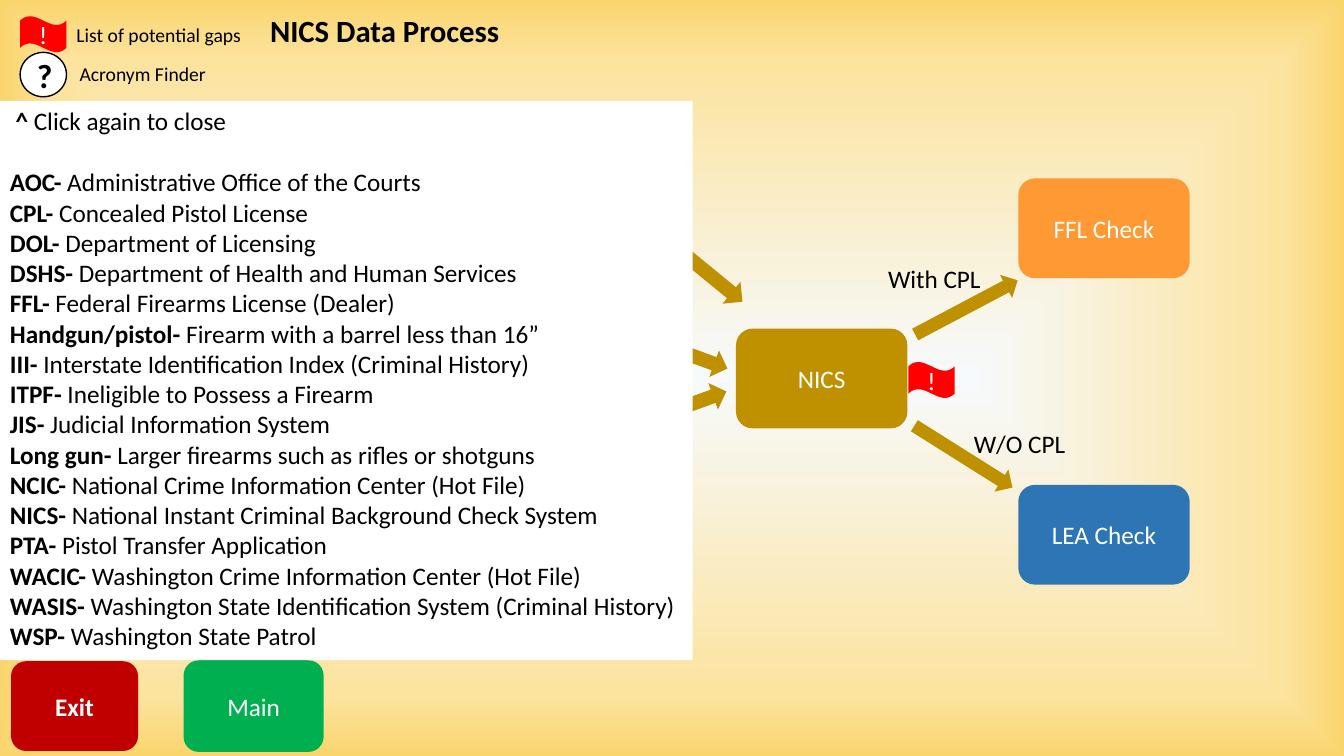
from dataclasses import dataclass

from pptx import Presentation, util as u
from pptx.dml.color import RGBColor
from pptx.enum import shapes, text
from pptx.oxml import parse_xml

SCALE = 9144  # EMU per px, 100 px to the inch
KIND = shapes.MSO_SHAPE


@dataclass(frozen=True)
class Theme:
    font: str = "Calibri"
    gold: str = "BF9000"
    red: str = "FF0000"
    dark_red: str = "C00000"
    green: str = "00B050"
    orange: str = "FF9933"
    blue: str = "2E75B6"
    white: str = "FFFFFF"
    black: str = "000000"
    background: tuple = ((0, "F7FAFD"), (84, "FCE39E"), (100, "FAD56E"))
    small: int = 14
    body: int = 18
    title: int = 22
    symbol: int = 24


THEME = Theme()


@dataclass(frozen=True)
class Box:
    left: int
    top: int
    width: int
    height: int

    def emu(self) -> list:
        return [u.Emu(px * SCALE) for px in (self.left, self.top, self.width, self.height)]


@dataclass(frozen=True)
class Node:
    box: Box
    label: str
    fill: str
    kind: int = KIND.ROUNDED_RECTANGLE
    color: str = THEME.white
    size: int = THEME.body
    bold: bool = False
    outline: str = ""


@dataclass(frozen=True)
class Arrow:
    box: Box
    rotation: float


@dataclass(frozen=True)
class Label:
    box: Box
    label: str
    size: int = THEME.body
    bold: bool = False
    wrap: bool = True


NODES = [
    Node(Box(730, 326, 170, 99), "NICS", THEME.gold),
    Node(Box(11, 656, 126, 89), "Exit", THEME.dark_red, bold=True),
    Node(Box(182, 655, 139, 91), "Main", THEME.green),
    Node(Box(1010, 177, 170, 99), "FFL Check", THEME.orange),
    Node(Box(1010, 481, 170, 99), "LEA Check", THEME.blue),
    Node(Box(20, 16, 46, 36), "!", THEME.red, KIND.WAVE),
    Node(Box(901, 359, 46, 36), "!", THEME.red, KIND.WAVE),
]
ACRONYM_BUTTON = Node(Box(20, 52, 46, 44), "?", THEME.white, KIND.OVAL, THEME.black,
                      THEME.symbol, True, THEME.black)
ARROWS = [
    Arrow(Box(559, 222, 200, 28), 39.3),
    Arrow(Box(576, 326, 150, 28), 20),
    Arrow(Box(575, 400, 150, 28), 340),
    Arrow(Box(901, 292, 115, 26), 332.1),
    Arrow(Box(898, 440, 115, 26), 32.2),
]
LABELS = [
    Label(Box(66, 18, 192, 34), "List of potential gaps", THEME.small),
    Label(Box(69, 57, 192, 34), "Acronym Finder", THEME.small),
    Label(Box(956, 420, 236, 40), "W/O CPL"),
    Label(Box(871, 256, 236, 40), "With CPL"),
    Label(Box(258, 7, 251, 47), "NICS Data Process", THEME.title, True, False),
]
PANEL = Box(0, 100, 687, 555)
PANEL_HINT = (" ^ ", "Click again to close")
ACRONYMS = {
    "AOC": "Administrative Office of the Courts",
    "CPL": "Concealed Pistol License",
    "DOL": "Department of Licensing",
    "DSHS": "Department of Health and Human Services",
    "FFL": "Federal Firearms License (Dealer)",
    "Handgun/pistol": "Firearm with a barrel less than 16”",
    "III": "Interstate Identification Index (Criminal History)",
    "ITPF": "Ineligible to Possess a Firearm",
    "JIS": "Judicial Information System",
    "Long gun": "Larger firearms such as rifles or shotguns",
    "NCIC": "National Crime Information Center (Hot File)",
    "NICS": "National Instant Criminal Background Check System",
    "PTA": "Pistol Transfer Application",
    "WACIC": "Washington Crime Information Center (Hot File)",
    "WASIS": "Washington State Identification System (Criminal History)",
    "WSP": "Washington State Patrol",
}


def style_run(run, size: int, color: str, bold: bool) -> None:
    run.font.name = THEME.font
    run.font.size = u.Pt(size)
    run.font.bold = bold
    run.font.color.rgb = RGBColor.from_string(color)


def add_shape(slide, kind: int, box: Box, fill: str, outline: str = ""):
    shape = slide.shapes.add_shape(kind, *box.emu())
    shape.shadow.inherit = False
    shape.fill.solid()
    shape.fill.fore_color.rgb = RGBColor.from_string(fill)
    if outline:
        shape.line.color.rgb = RGBColor.from_string(outline)
        shape.line.width = u.Pt(1)
    else:
        shape.line.fill.background()
    return shape


def add_node(slide, node: Node) -> None:
    shape = add_shape(slide, node.kind, node.box, node.fill, node.outline)
    frame = shape.text_frame
    frame.text = node.label
    frame.vertical_anchor = text.MSO_ANCHOR.MIDDLE
    paragraph = frame.paragraphs[0]
    paragraph.alignment = text.PP_ALIGN.CENTER
    style_run(paragraph.runs[0], node.size, node.color, node.bold)


def add_arrow(slide, arrow: Arrow) -> None:
    add_shape(slide, KIND.RIGHT_ARROW, arrow.box, THEME.gold).rotation = arrow.rotation


def add_label(slide, label: Label) -> None:
    frame = slide.shapes.add_textbox(*label.box.emu()).text_frame
    frame.word_wrap = label.wrap
    frame.text = label.label
    style_run(frame.paragraphs[0].runs[0], label.size, THEME.black, label.bold)


def add_acronym_panel(slide) -> None:
    frame = add_shape(slide, KIND.RECTANGLE, PANEL, THEME.white).text_frame
    frame.word_wrap = False
    frame.vertical_anchor = text.MSO_ANCHOR.TOP
    lines = [PANEL_HINT] + [(f"{term}-", f" {meaning}") for term, meaning in ACRONYMS.items()]
    for index, parts in enumerate(lines):
        paragraph = frame.add_paragraph() if index else frame.paragraphs[0]
        paragraph.alignment = text.PP_ALIGN.LEFT
        for part, bold in zip(parts, (True, False)):
            run = paragraph.add_run()
            run.text = part
            style_run(run, THEME.body, THEME.black, bold)
    frame.paragraphs[0].space_after = u.Pt(22)


def set_background(slide) -> None:
    fill = slide.background.fill
    fill.gradient()
    stops = "".join(f'<a:gs pos="{position * 1000}"><a:srgbClr val="{color}"/></a:gs>'
                    for position, color in THEME.background)
    gradient = parse_xml(
        '<a:gradFill xmlns:a="http://schemas.openxmlformats.org/drawingml/2006/main" '
        f'rotWithShape="1"><a:gsLst>{stops}</a:gsLst><a:path path="shape">'
        '<a:fillToRect l="50000" t="50000" r="50000" b="50000"/></a:path></a:gradFill>')
    linear = slide.element.xpath("./p:cSld/p:bg/p:bgPr/a:gradFill")[0]
    linear.getparent().replace(linear, gradient)


def main() -> None:
    presentation = Presentation()
    presentation.slide_width = u.Emu(1333 * SCALE)
    presentation.slide_height = u.Emu(750 * SCALE)
    slide = presentation.slides.add_slide(presentation.slide_layouts[6])
    set_background(slide)
    # Process flow
    for node in NODES:
        add_node(slide, node)
    for arrow in ARROWS:
        add_arrow(slide, arrow)
    for label in LABELS:
        add_label(slide, label)
    # Acronym list, covering the left of the flow
    add_acronym_panel(slide)
    add_node(slide, ACRONYM_BUTTON)
    presentation.save("out.pptx")


if __name__ == "__main__":
    main()
